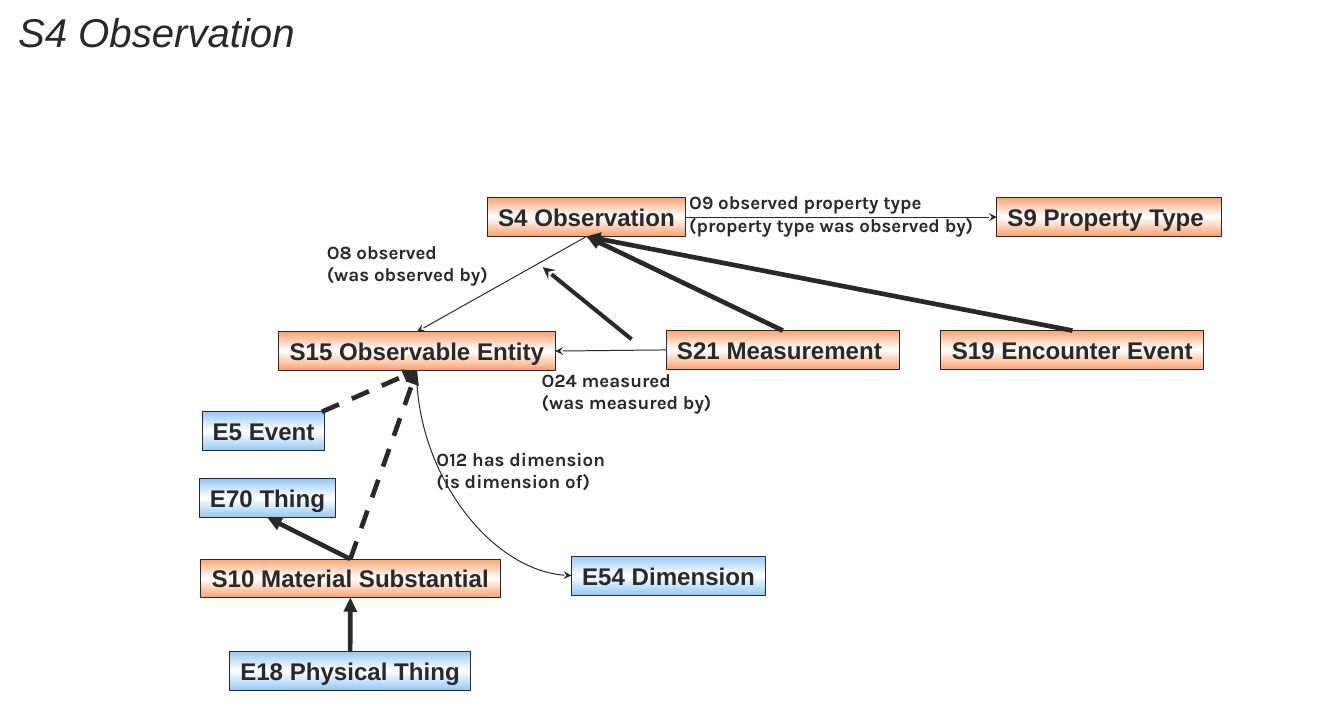
import copy

import pptx
import pptx.dml.color
import pptx.enum.dml
import pptx.enum.shapes
import pptx.enum.text
import pptx.oxml
import pptx.oxml.ns
import pptx.util

Cm, Pt = pptx.util.Cm, pptx.util.Pt
qn = pptx.oxml.ns.qn
ALIGN, ANCHOR = pptx.enum.text.PP_ALIGN, pptx.enum.text.MSO_ANCHOR
CONNECTOR = pptx.enum.shapes.MSO_CONNECTOR

INK = pptx.dml.color.RGBColor(0x29, 0x29, 0x29)
ORANGE = pptx.dml.color.RGBColor(0xFA, 0xA3, 0x72)
BLUE = pptx.dml.color.RGBColor(0x97, 0xC9, 0xF3)
WHITE = pptx.dml.color.RGBColor(0xFF, 0xFF, 0xFF)

TITLE_FONT = {"name": "Arial", "size": Pt(30), "italic": True}
CLASS_FONT = {"name": "Arial", "size": Pt(18), "bold": True}
PROPERTY_FONT = {"name": "Karla", "size": Pt(14), "bold": True}
BOX_HEIGHT = 1.02
TOP, LEFT, BOTTOM, RIGHT = range(4)


def write(box, lines, font, align, anchor, wrap):
    frame = box.text_frame
    frame.word_wrap = wrap
    frame.vertical_anchor = anchor
    for index, line in enumerate(lines):
        para = frame.add_paragraph() if index else frame.paragraphs[0]
        para.alignment = align
        span = para.add_run()
        span.text = line
        span.font.color.rgb = INK
        for name, value in font.items():
            setattr(span.font, name, value)


def style_arrow(arrow, width, head, dashed=False):
    arrow.line.color.rgb = INK
    arrow.line.width = Pt(width)
    if dashed:
        arrow.line.dash_style = pptx.enum.dml.MSO_LINE.DASH
    properties = arrow._element.spPr
    tail = pptx.oxml.parse_xml(
        f'<a:tailEnd {pptx.oxml.ns.nsdecls("a")} type="{head}"/>')
    properties.find(qn("a:ln")).append(tail)
    properties.append(pptx.oxml.parse_xml(
        f'<a:effectLst {pptx.oxml.ns.nsdecls("a")}/>'))


deck = pptx.Presentation()
deck.slide_width, deck.slide_height = Cm(35.41), Cm(19.05)
page = deck.slides.add_slide(deck.slide_layouts[6])

title = page.shapes.add_textbox(Cm(-0.08), Cm(0), Cm(8.1), Cm(1.6))
write(title, ["S4 Observation"], TITLE_FONT, ALIGN.RIGHT, ANCHOR.BOTTOM, True)

# Class boxes: left, top, width, colour, name
classes = [
    (12.85, 5.21, 5.21, ORANGE, "S4 Observation"),
    (26.26, 5.21, 5.92, ORANGE, "S9 Property Type "),
    (7.34, 8.74, 7.29, ORANGE, "S15 Observable Entity"),
    (17.55, 8.71, 6.15, ORANGE, "S21 Measurement "),
    (24.79, 8.71, 6.93, ORANGE, "S19 Encounter Event"),
    (5.33, 10.85, 3.23, BLUE, "E5 Event"),
    (5.26, 12.62, 3.58, BLUE, "E70 Thing"),
    (5.28, 14.73, 7.9, ORANGE, "S10 Material Substantial"),
    (15.06, 14.66, 5.11, BLUE, "E54 Dimension"),
    (6.05, 17.17, 6.35, BLUE, "E18 Physical Thing"),
]
boxes = {}
for left, top, width, colour, name in classes:
    box = page.shapes.add_shape(
        pptx.enum.shapes.MSO_SHAPE.RECTANGLE,
        Cm(left), Cm(top), Cm(width), Cm(BOX_HEIGHT))
    box.shadow.inherit = False
    box.line.color.rgb = INK
    box.line.width = Pt(0.75)
    box.fill.gradient()
    box.fill.gradient_angle = 90
    stop_list = box._element.spPr.find(".//" + qn("a:gsLst"))
    stop_list.append(copy.deepcopy(stop_list[0]))
    for stop, position, shade in zip(
            box.fill.gradient_stops, (0, 0.5, 1), (colour, WHITE, colour)):
        stop.position = position
        stop.color.rgb = shade
    write(box, [name], CLASS_FONT, ALIGN.CENTER, ANCHOR.TOP, False)
    boxes[name.split()[0]] = box

# Arrows between boxes: start, side, end, side, width, head, dashed
links = [
    ("S19", TOP, "S4", BOTTOM, 3.5, "triangle", False),
    ("S21", TOP, "S4", BOTTOM, 3.5, "triangle", False),
    ("S10", TOP, "S15", BOTTOM, 3.5, "triangle", True),
    ("S10", TOP, "E70", BOTTOM, 3.5, "triangle", False),
    ("E18", TOP, "S10", BOTTOM, 3.5, "triangle", False),
    ("S4", RIGHT, "S9", LEFT, 0.75, "stealth", False),
    ("S4", BOTTOM, "S15", TOP, 0.75, "stealth", False),
    ("S21", LEFT, "S15", RIGHT, 0.75, "stealth", False),
]
for start, start_side, end, end_side, width, head, dashed in links:
    arrow = page.shapes.add_connector(CONNECTOR.STRAIGHT, 0, 0, 0, 0)
    arrow.begin_connect(boxes[start], start_side)
    arrow.end_connect(boxes[end], end_side)
    style_arrow(arrow, width, head, dashed)

event_link = page.shapes.add_connector(
    CONNECTOR.STRAIGHT, Cm(8.48), Cm(10.85), Cm(10.98), Cm(9.76))
style_arrow(event_link, 3.5, "triangle", True)

subproperty_link = page.shapes.add_connector(
    CONNECTOR.STRAIGHT, Cm(16.64), Cm(8.94), Cm(14.3), Cm(7.04))
style_arrow(subproperty_link, 3, "stealth")

# A quarter bend, turned so that it leaves S15 downwards and enters E54 sideways
dimension_link = page.shapes.add_connector(
    CONNECTOR.CURVE, Cm(15.72), Cm(10.42), Cm(10.31), Cm(14.5))
dimension_link._element.spPr.find(qn("a:xfrm")).set("rot", "16200000")
dimension_link._element.spPr.find(qn("a:prstGeom")).set("prst", "curvedConnector2")
style_arrow(dimension_link, 0.75, "stealth")

# Property labels: left, top, width, lines
labels = [
    (17.91, 4.9, 8.86, ["O9 observed property type", "(property type was observed by)"]),
    (8.36, 6.2, 5.23, ["O8 observed", "(was observed by)"]),
    (14.02, 9.58, 5.38, ["O24 measured", "(was measured by)"]),
    (11.25, 11.66, 5.31, ["O12 has dimension", "(is dimension of)"]),
]
for left, top, width, lines in labels:
    label = page.shapes.add_textbox(Cm(left), Cm(top), Cm(width), Cm(1.45))
    write(label, lines, PROPERTY_FONT, ALIGN.LEFT, ANCHOR.MIDDLE, True)

deck.save("out.pptx")
